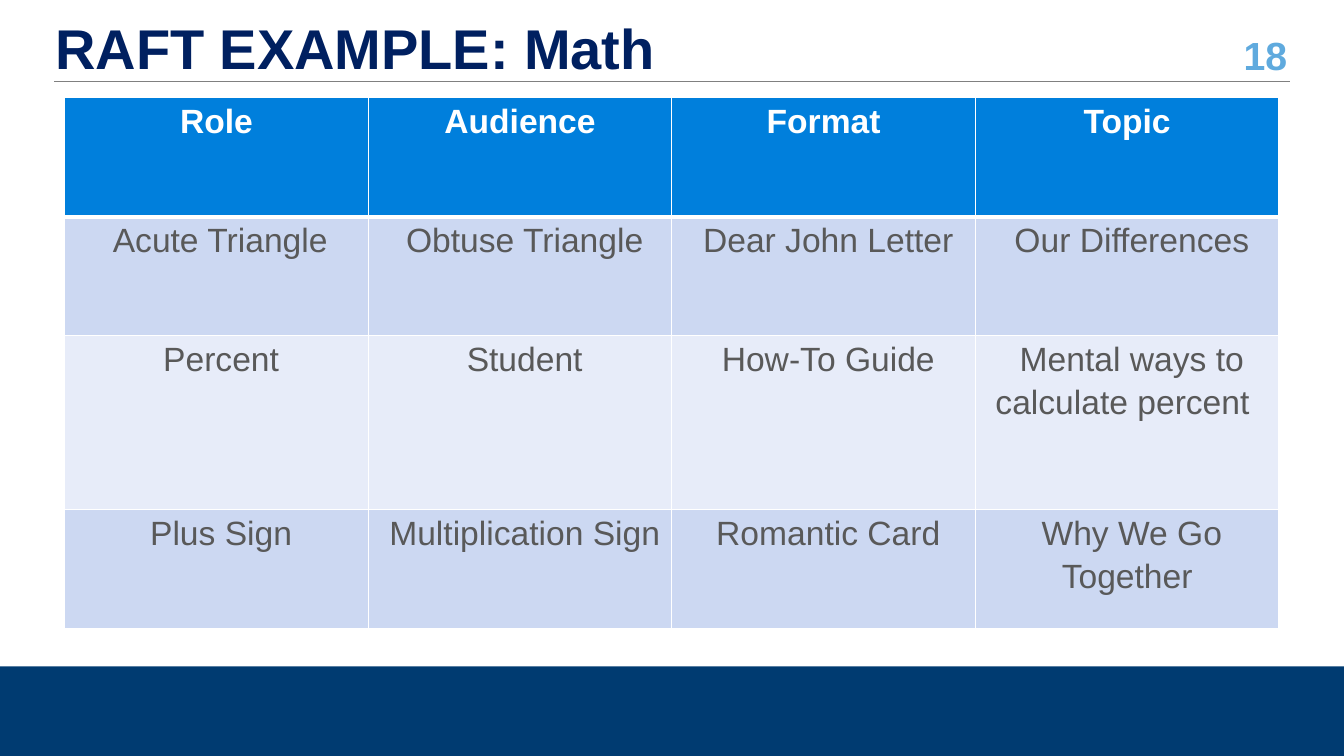
from dataclasses import dataclass

from lxml import etree
from pptx import Presentation
from pptx.dml.color import RGBColor
from pptx.enum.shapes import MSO_CONNECTOR, MSO_SHAPE
from pptx.enum.text import MSO_ANCHOR, MSO_AUTO_SIZE, PP_ALIGN
from pptx.oxml.ns import qn
from pptx.util import Cm, Pt

STRAIGHT = MSO_CONNECTOR.STRAIGHT
RECTANGLE = MSO_SHAPE.RECTANGLE
MIDDLE = MSO_ANCHOR.MIDDLE
NO_AUTOFIT = MSO_AUTO_SIZE.NONE
LEFT, CENTER, RIGHT = PP_ALIGN.LEFT, PP_ALIGN.CENTER, PP_ALIGN.RIGHT
TITLE_ONLY = 5


@dataclass(frozen=True)
class Theme:
    """Colours, font and type sizes of the slide."""
    font: str = "Arial"
    title: str = "002060"
    number: str = "5FAADE"
    rule: str = "808080"
    footer: str = "003B71"
    header: str = "007FDC"
    band_dark: str = "CCD8F2"
    band_light: str = "E7ECF9"
    body: str = "595959"
    white: str = "FFFFFF"
    title_size: int = 40
    number_size: int = 28
    table_size: int = 24


THEME = Theme()
ROWS = [
    ["Role", "Audience", "Format", "Topic"],
    [" Acute Triangle", " Obtuse Triangle", " Dear John Letter", " Our Differences"],
    [" Percent", " Student", " How-To Guide", " Mental ways to calculate percent "],
    [" Plus Sign", " Multiplication Sign", " Romantic Card", " Why We Go Together"],
]
COLUMN_WIDTH = 7.65
ROW_HEIGHTS = [3, 3, 4.37, 3]


def rgb(color):
    """Return the colour object for a hex string."""
    return RGBColor.from_string(color)


def write(tf, text, size, color, bold=False, align=LEFT, spacing=None):
    """Set one formatted paragraph in a text frame."""
    tf.text = text
    p = tf.paragraphs[0]
    p.alignment = align
    p.line_spacing = spacing
    for r in p.runs:
        r.font.name = THEME.font
        r.font.size = Pt(size)
        r.font.bold = bold
        r.font.color.rgb = rgb(color)


def set_title(slide, text):
    """Place and format the title placeholder."""
    sp = slide.shapes.title
    sp.left, sp.top, sp.width, sp.height = Cm(1.14), Cm(0.76), Cm(29.46), Cm(1.07)
    tf = sp.text_frame
    tf.auto_size = NO_AUTOFIT
    tf.vertical_anchor = MIDDLE
    write(tf, text, THEME.title_size, THEME.title, True, spacing=0.9)


def add_footer_bar(slide, width):
    """Add the coloured band along the bottom edge."""
    sp = slide.shapes.add_shape(RECTANGLE, 0, Cm(16.79), width, Cm(2.26))
    sp.shadow.inherit = False
    sp.fill.solid()
    sp.fill.fore_color.rgb = rgb(THEME.footer)
    sp.line.fill.background()


def add_page_number(slide, text):
    """Add the page number at the top right."""
    sp = slide.shapes.add_textbox(Cm(30.66), Cm(0.84), Cm(2.03), Cm(1.07))
    tf = sp.text_frame
    tf.word_wrap = True
    tf.vertical_anchor = MIDDLE
    write(tf, text, THEME.number_size, THEME.number, True, RIGHT)


def add_title_rule(slide):
    """Add the thin line below the title."""
    line = slide.shapes.add_connector(STRAIGHT, Cm(1.37), Cm(2.04), Cm(32.51), Cm(2.04))
    line.line.color.rgb = rgb(THEME.rule)
    line.line.width = Pt(0.5)
    etree.SubElement(line._element.spPr, qn("a:effectLst"))


def set_borders(cell, top, bottom):
    """Draw white cell borders, with top and bottom widths in points."""
    tc_pr = cell._tc.get_or_add_tcPr()
    for side, width in (("L", 1), ("R", 1), ("T", top), ("B", bottom)):
        ln = etree.SubElement(tc_pr, qn(f"a:ln{side}"), w=str(Pt(width)))
        fill = etree.SubElement(ln, qn("a:solidFill"))
        etree.SubElement(fill, qn("a:srgbClr"), val=THEME.white)


def format_cell(cell, text, row):
    """Fill one table cell according to its row."""
    set_borders(cell, 3 if row == 1 else 1, 3 if row == 0 else 1)
    cell.fill.solid()
    if row == 0:
        cell.fill.fore_color.rgb = rgb(THEME.header)
        write(cell.text_frame, text, THEME.table_size, THEME.white, True, CENTER)
        return
    cell.fill.fore_color.rgb = rgb(THEME.band_dark if row % 2 else THEME.band_light)
    cell.margin_left = cell.margin_right = Cm(0.18)
    cell.margin_top = cell.margin_bottom = 0
    write(cell.text_frame, text, THEME.table_size, THEME.body, False, CENTER, 1.15)


def add_raft_table(slide):
    """Add the role, audience, format and topic table."""
    n_cols = len(ROWS[0])
    frame = slide.shapes.add_table(len(ROWS), n_cols, Cm(1.63), Cm(2.46),
                                   Cm(COLUMN_WIDTH * n_cols), Cm(sum(ROW_HEIGHTS)))
    table = frame.table
    for column in table.columns:
        column.width = Cm(COLUMN_WIDTH)
    for i, (height, texts) in enumerate(zip(ROW_HEIGHTS, ROWS)):
        table.rows[i].height = Cm(height)
        for j, text in enumerate(texts):
            format_cell(table.cell(i, j), text, i)


def main():
    """Build and save the slide."""
    prs = Presentation()
    prs.slide_width, prs.slide_height = Cm(33.87), Cm(19.05)
    slide = prs.slides.add_slide(prs.slide_layouts[TITLE_ONLY])
    add_footer_bar(slide, prs.slide_width)
    add_page_number(slide, "18")
    add_title_rule(slide)
    set_title(slide, "RAFT EXAMPLE: Math")
    add_raft_table(slide)
    prs.save("out.pptx")


if __name__ == "__main__":
    main()
